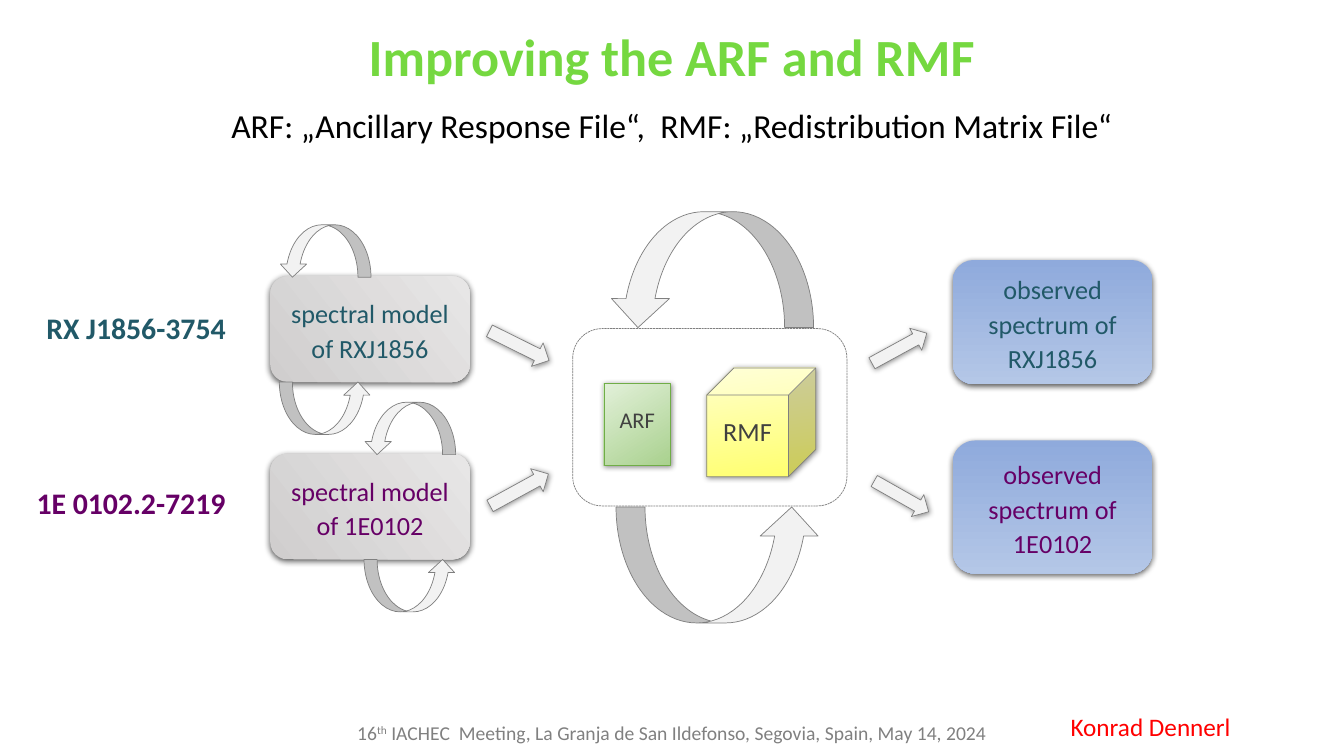
from lxml import etree
from pptx import Presentation, util as u
from pptx.dml.color import RGBColor
from pptx.enum import dml, shapes, text
from pptx.oxml.ns import qn

Inches, Pt = u.Inches, u.Pt
MSO = shapes.MSO_SHAPE
CENTER = text.PP_ALIGN.CENTER
COLORS = {
    "black": "000000", "title": "75D840", "teal": "215968", "purple": "660066",
    "red": "FF0000", "footer": "808080", "label": "404040", "edge": "7F7F7F",
    "green_edge": "70AD47", "arrow": "F2F2F2",
    "yellow": "FFFF6D", "light_yellow": "FFFFCC",
    "green": "A9D18E", "light_green": "E2F0D9",
    "gray": "D0CECE", "light_gray": "E7E6E6",
    "blue": "8FAADC", "light_blue": "B4C7E7",
}
# Shadows: opacity in percent, blur and distance in points, direction in degrees
SOFT, DEEP = (43, 4, 1, 45), (63, 4.5, 1.5, 90)


def rgb(name):
    return RGBColor.from_string(COLORS[name])


def add_shadow(effects, opacity, blur, dist, angle):
    """Append an outer shadow to an a:effectLst element."""
    shadow = etree.SubElement(
        effects, qn("a:outerShdw"), blurRad=str(int(Pt(blur))), dist=str(int(Pt(dist))),
        dir=str(angle * 60000), algn="ctr", rotWithShape="0")
    color = etree.SubElement(shadow, qn("a:srgbClr"), val=COLORS["black"])
    etree.SubElement(color, qn("a:alpha"), val=str(opacity * 1000))


class Deck:
    """Holds the font and the current slide, and adds each kind of element."""
    font = "Calibri"

    def __init__(self, width, height):
        self.prs = Presentation()
        self.prs.slide_width, self.prs.slide_height = Inches(width), Inches(height)
        self.s = self.prs.slides.add_slide(self.prs.slide_layouts[5])

    def fill_text(self, tf, content, size, color, bold=False, margins=None, **para):
        """Fill a text frame; margins are left, top, right, bottom in inches."""
        sides = ("margin_left", "margin_top", "margin_right", "margin_bottom")
        for side, value in zip(sides, margins or (0.1, 0.05, 0.1, 0.05)):
            setattr(tf, side, Inches(value))
        p = tf.paragraphs[0]
        for name, value in para.items():
            setattr(p, name, value)
        parts = [content] if isinstance(content, str) else content
        for part in parts:
            r = p.add_run()
            r.text = part
            r.font.color.rgb = rgb(color)
            for name, value in {"size": Pt(size), "bold": bold, "name": self.font}.items():
                setattr(r.font, name, value)
        return p

    def title(self, box, content, size, color):
        sp = self.s.shapes.title
        sp.left, sp.top, sp.width, sp.height = map(Inches, box)
        sp.text_frame.vertical_anchor = text.MSO_ANCHOR.MIDDLE
        p = self.fill_text(sp.text_frame, content, size, color, True, alignment=CENTER)
        fill = p.runs[0].font._element.find(qn("a:solidFill"))
        effects = etree.Element(qn("a:effectLst"))
        fill.addnext(effects)
        add_shadow(effects, 60, 1, 1.5, 45)

    def text(self, box, content, size, color, wrap=True, **style):
        tf = self.s.shapes.add_textbox(*map(Inches, box)).text_frame
        tf.word_wrap = wrap
        return self.fill_text(tf, content, size, color, **style)

    def shape(self, kind, box, fill=None, line=None, shadow=None, rotation=0,
              flip=False, dash=None):
        """Add a preset shape; fill is a colour name or (start, end, clockwise angle)."""
        sp = self.s.shapes.add_shape(kind, *map(Inches, box))
        sp.rotation = rotation
        if flip:
            sp._element.spPr.find(qn("a:xfrm")).set("flipH", "1")
        if fill is None:
            sp.fill.background()
        elif isinstance(fill, str):
            sp.fill.solid()
            sp.fill.fore_color.rgb = rgb(fill)
        else:
            sp.fill.gradient()
            sp.fill.gradient_angle = 360 - fill[2]
            for stop, name in zip(sp.fill.gradient_stops, fill):
                stop.color.rgb = rgb(name)
        if line:
            sp.line.color.rgb = rgb(line)
            sp.line.width = Pt(0.5)
            if dash:
                sp.line.dash_style = dash
        else:
            sp.line.fill.background()
        sp.shadow.inherit = False
        if shadow:
            add_shadow(sp._element.spPr.find(qn("a:effectLst")), *shadow)
        return sp

    def box(self, kind, box, content, size, color, margins, spacing=1.0, **look):
        tf = self.shape(kind, box, **look).text_frame
        tf.word_wrap = True
        tf.vertical_anchor = text.MSO_ANCHOR.MIDDLE
        self.fill_text(tf, content, size, color, margins=margins,
                       alignment=CENTER, line_spacing=spacing)

    def block_arrow(self, box, rotation):
        self.shape(MSO.RIGHT_ARROW, box, "arrow", "edge", SOFT, rotation)

    def loop_arrow(self, box, rotation=0):
        self.shape(MSO.CURVED_DOWN_ARROW, box, "arrow", "edge", rotation=rotation, flip=True)


def main():
    deck = Deck(13.33, 7.5)
    deck.title((0, 0.17, 13.33, 0.76), "Improving the ARF and RMF", 37.3, "title")
    deck.text((0, 0.97, 13.33, 0.54),
              "ARF: „Ancillary Response File“,  RMF: „Redistribution Matrix File“",
              24, "black", margins=(0.13, 0.07, 0.13, 0.07), alignment=CENTER)

    # Response files and their iteration loops
    inner = (0.1, 0.05, 0.1, 0.14)
    deck.box(MSO.CUBE, (7.01, 3.65, 1.08, 1.08), "RMF", 18.7, "label", inner,
             fill=("yellow", "light_yellow", 262), line="edge", shadow=SOFT)
    deck.box(MSO.RECTANGLE, (5.99, 3.8, 0.66, 0.82), "ARF", 16, "label", inner,
             fill=("green", "light_green", 237), line="green_edge", shadow=SOFT)
    deck.shape(MSO.ROUNDED_RECTANGLE, (5.68, 3.26, 2.72, 1.76), line="edge",
               dash=dml.MSO_LINE.SQUARE_DOT)
    deck.loop_arrow((6.11, 5.03, 2.03, 1.15), 180)
    deck.loop_arrow((6.04, 2.1, 2.03, 1.15))

    # One row per source: label, model, observed spectrum, loops
    rows = [
        ("RX J1856-3754", "RXJ1856", "teal", (0.35, 3.02, 2, 0.46), 2.74, 2.58, 1.23, 2.77),
        ("1E 0102.2-7219", "1E0102", "purple", (0.25, 4.76, 2.1, 0.46), 4.5, 4.37, 1.32, 3.61),
    ]
    pad = (0.13, 0.2, 0.13, 0.2)
    for name, short, color, label, model_y, spectrum_y, spectrum_h, loop_x in rows:
        deck.text(label, name, 21.3, color, wrap=False, bold=True, alignment=CENTER)
        deck.box(MSO.ROUNDED_RECTANGLE, (2.68, model_y, 1.98, 1.05),
                 f"spectral model of {short}", 18.7, color, pad, 1.1,
                 fill=("gray", "light_gray", 322), shadow=DEEP)
        deck.box(MSO.ROUNDED_RECTANGLE, (9.45, spectrum_y, 1.98, spectrum_h),
                 f"observed spectrum of {short}", 18.7, color, pad, 1.1,
                 fill=("blue", "light_blue", 90), shadow=DEEP)
        deck.loop_arrow((loop_x, model_y - 0.51, 0.91, 0.52))
        deck.loop_arrow((loop_x, model_y + 1.05, 0.91, 0.52), 180)

    for x, y, w, h, rotation in [(4.82, 3.3, 0.66, 0.26, 26.4), (4.82, 4.73, 0.66, 0.26, 331.3),
                                 (8.63, 4.8, 0.62, 0.25, 29.5), (8.61, 3.33, 0.62, 0.25, 331.3)]:
        deck.block_arrow((x, y, w, h), rotation)

    footer = deck.text(
        (2.2, 7.1, 8.93, 0.37),
        ["16", "th", " IACHEC  Meeting, La Granja de San Ildefonso, Segovia, Spain, May 14, 2024"],
        14, "footer", alignment=CENTER, space_before=Pt(2.8))
    footer.runs[1].font._element.set("baseline", "30000")
    deck.text((10.52, 7.01, 2.04, 0.4), "Konrad Dennerl", 18, "red")
    deck.prs.save("out.pptx")


if __name__ == "__main__":
    main()
